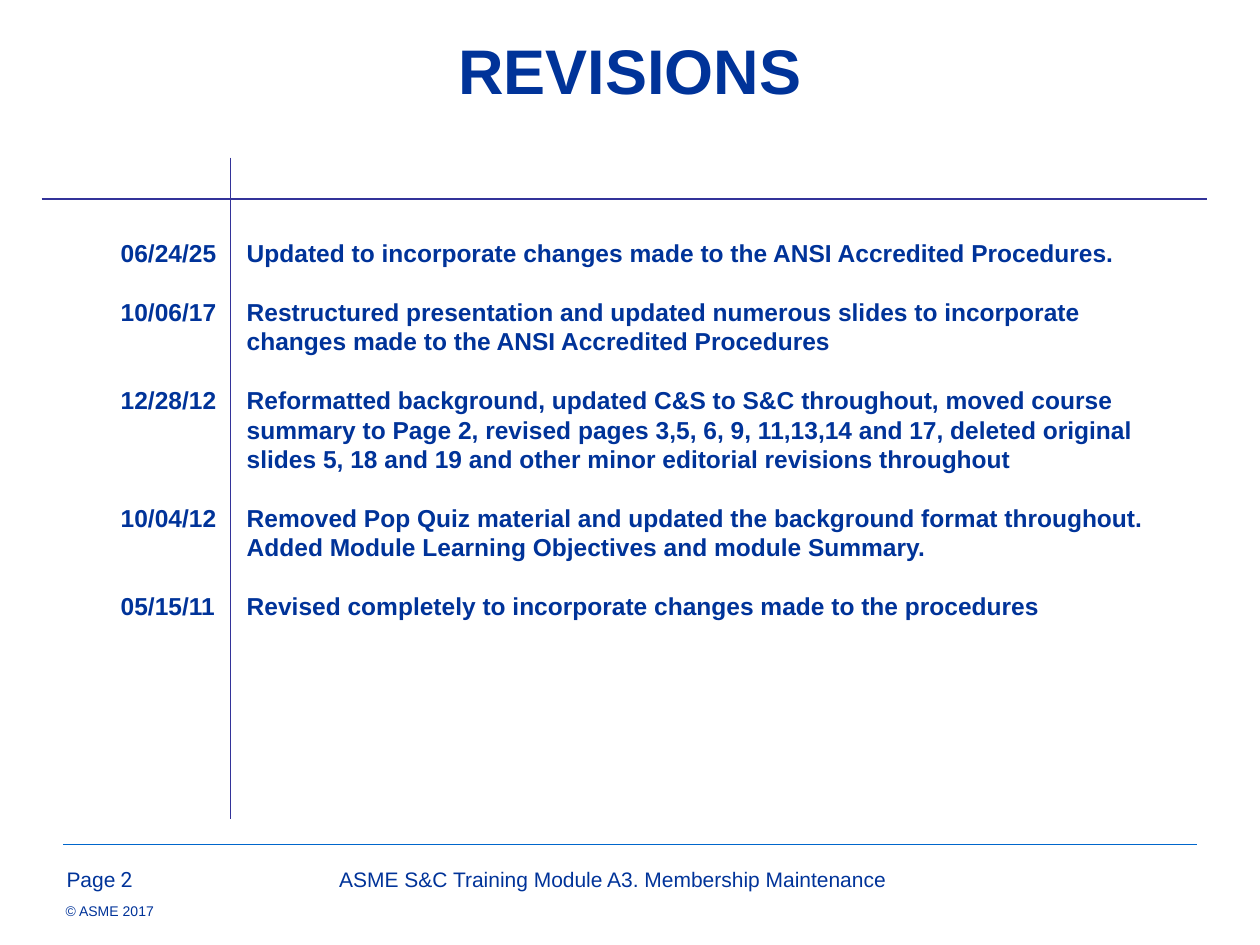
"""Build the revisions history slide."""
from lxml.etree import SubElement
from pptx import Presentation
from pptx.dml.color import RGBColor
from pptx.enum.shapes import MSO_CONNECTOR
from pptx.enum.text import MSO_ANCHOR, PP_ALIGN
from pptx.oxml.ns import qn
from pptx.util import Inches, Pt

NAVY = "003399"
INDIGO = "333399"
AZURE = "0066CC"
LINE_PITCH = Pt(16.8)

REVISIONS = [
    ("06/24/25", "Updated to incorporate changes made to the ANSI Accredited Procedures."),
    ("10/06/17", "Restructured presentation and updated numerous slides to incorporate "
                 "changes made to the ANSI Accredited Procedures"),
    ("12/28/12", "Reformatted background, updated C&S to S&C throughout, moved course "
                 "summary to Page 2, revised pages 3,5, 6, 9, 11,13,14 and 17, deleted original "
                 "slides 5, 18 and 19 and other minor editorial revisions throughout"),
    ("10/04/12", "Removed Pop Quiz material and updated the background format throughout. "
                 "Added Module Learning Objectives and module Summary."),
    ("05/15/11", "Revised completely to incorporate changes made to the procedures"),
]

RULES = [
    ((0.5, 6.7), (9.5, 6.7), AZURE, 0.75),
    ((1.83, 1.25), (1.83, 6.5), INDIGO, 1),
    ((0.33, 1.58), (9.58, 1.58), INDIGO, 1),
]

FOOTERS = [
    ("Page", (0.43, 6.83, 2.33, 0.52), PP_ALIGN.LEFT, "Arial"),
    ("ASME S&C Training Module A3. Membership Maintenance",
     (1.53, 6.83, 6.67, 0.52), PP_ALIGN.CENTER, "Arial"),
    ("2", (0.86, 6.83, 0.47, 0.52), PP_ALIGN.LEFT, "Roboto"),
]


def color(value):
    return RGBColor.from_string(value)


def add_rule(slide, start, end, line_color, width):
    rule = slide.shapes.add_connector(
        MSO_CONNECTOR.STRAIGHT, *(Inches(value) for value in start + end))
    rule.line.color.rgb = color(line_color)
    rule.line.width = Pt(width)
    SubElement(rule._element.spPr, qn("a:effectLst"))


def add_frame(slide, box):
    frame = slide.shapes.add_textbox(*(Inches(value) for value in box)).text_frame
    frame.word_wrap = True
    return frame


def add_run(paragraph, text, size, bold=False, font_name="Arial"):
    run = paragraph.add_run()
    run.text = text
    run.font.name = font_name
    run.font.size = Pt(size)
    run.font.bold = bold
    run.font.color.rgb = color(NAVY)


def add_title(slide):
    frame = add_frame(slide, (1, 0.3, 8, 0.5))
    frame.vertical_anchor = MSO_ANCHOR.MIDDLE
    paragraph = frame.paragraphs[0]
    paragraph.alignment = PP_ALIGN.CENTER
    add_run(paragraph, "REVISIONS", 36, bold=True)


def add_revisions(slide):
    frame = add_frame(slide, (0.86, 1.84, 8.58, 4.77))
    for index, (date, change) in enumerate(REVISIONS):
        paragraph = frame.add_paragraph() if index else frame.paragraphs[0]
        properties = paragraph._p.get_or_add_pPr()
        properties.set("marL", str(Inches(1)))
        properties.set("indent", str(Inches(-1)))
        paragraph.line_spacing = LINE_PITCH
        if index:
            paragraph.space_before = LINE_PITCH
        add_run(paragraph, f"{date}\t{change}", 14, bold=True)


def add_footers(slide):
    for text, box, alignment, font_name in FOOTERS:
        paragraph = add_frame(slide, box).paragraphs[0]
        paragraph.alignment = alignment
        add_run(paragraph, text, 12, font_name=font_name)
    frame = add_frame(slide, (0.52, 7.16, 0.72, 0.13))
    frame.word_wrap = False
    frame.margin_left = frame.margin_right = frame.margin_top = frame.margin_bottom = 0
    add_run(frame.paragraphs[0], "© ASME 2017", 8)


def main():
    presentation = Presentation()
    presentation.slide_width = Inches(10)
    presentation.slide_height = Inches(7.5)
    slide = presentation.slides.add_slide(presentation.slide_layouts[6])
    for rule in RULES:
        add_rule(slide, *rule)
    add_title(slide)
    add_revisions(slide)
    add_footers(slide)
    presentation.save("out.pptx")


if __name__ == "__main__":
    main()
